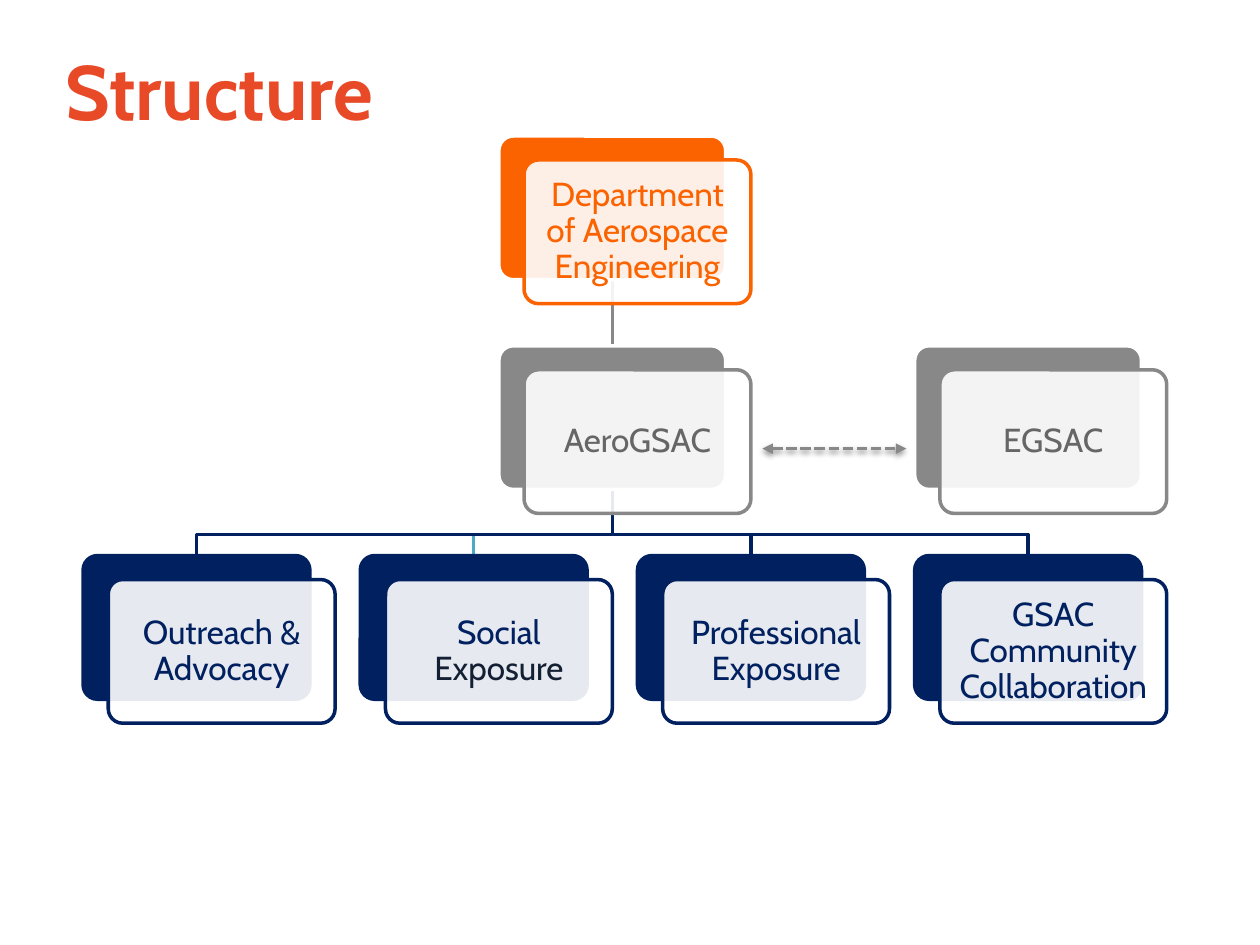
from dataclasses import dataclass

from lxml import etree
from pptx import Presentation
from pptx.dml.color import RGBColor
from pptx.enum.dml import MSO_LINE
from pptx.enum.shapes import MSO_CONNECTOR, MSO_SHAPE
from pptx.enum.text import MSO_ANCHOR, PP_ALIGN
from pptx.oxml.ns import qn
from pptx.util import Inches, Pt

ROUNDED = MSO_SHAPE.ROUNDED_RECTANGLE
STRAIGHT = MSO_CONNECTOR.STRAIGHT
DASH = MSO_LINE.SQUARE_DOT
MIDDLE = MSO_ANCHOR.MIDDLE
LEFT, CENTER = PP_ALIGN.LEFT, PP_ALIGN.CENTER
BOTTOM_SIDE, TOP_SIDE = 2, 0


@dataclass(frozen=True)
class Theme:
    font: str = "Cabin"
    title_size: int = 44
    card_size: int = 19
    line_width: int = 2
    title: str = "E84A27"
    orange: str = "FA6300"
    gray: str = "888888"
    gray_text: str = "666666"
    navy: str = "002060"
    dark_text: str = "131F33"
    cyan: str = "4BACC6"
    white: str = "FFFFFF"
    shadow: str = "000000"


THEME = Theme()


def write_text(frame, text, *, size, color, bold=False, align=LEFT, spacing=1.0):
    """Append one formatted run to the first paragraph of the frame."""
    paragraph = frame.paragraphs[0]
    paragraph.alignment = align
    paragraph.line_spacing = spacing
    run = paragraph.add_run()
    run.text = text
    run.font.name = THEME.font
    run.font.size = Pt(size)
    run.font.bold = bold
    run.font.color.rgb = RGBColor.from_string(color)


class OrgChart:
    """Cards on a grid of columns and rows, with the lines between them."""

    origin = (0.66, 1.08)
    pitch = (2.2, 1.665)
    card_size = (1.8, 1.14)
    front_offset = (0.2, 0.19)

    def __init__(self, slide, theme):
        self.slide = slide
        self.theme = theme

    def point(self, column, row):
        """Slide position of a grid place, whole or fractional."""
        return (Inches(self.origin[0] + column * self.pitch[0]),
                Inches(self.origin[1] + row * self.pitch[1]))

    def style_line(self, line, color):
        line.color.rgb = RGBColor.from_string(color)
        line.width = Pt(self.theme.line_width)

    def send_to_back(self, shape):
        self.slide.shapes._spTree.insert(2, shape._element)

    def title(self, text):
        box = self.slide.shapes.add_textbox(
            Inches(0.42), Inches(0.3), Inches(9.08), Inches(1.25))
        box.text_frame.word_wrap = True
        write_text(box.text_frame, text, size=self.theme.title_size,
                   color=self.theme.title, bold=True)

    def panel(self, x, y, fill, outline, opacity=100):
        width, height = (Inches(side) for side in self.card_size)
        panel = self.slide.shapes.add_shape(ROUNDED, x, y, width, height)
        panel.adjustments[0] = 0.1
        panel.shadow.inherit = False
        panel.fill.solid()
        panel.fill.fore_color.rgb = RGBColor.from_string(fill)
        if opacity < 100:
            color = panel.fill._xPr.find(f"{qn('a:solidFill')}/{qn('a:srgbClr')}")
            etree.SubElement(color, qn("a:alpha"), val=str(opacity * 1000))
        self.style_line(panel.line, outline)
        return panel

    def card(self, column, row, runs, color, back_outline):
        """A solid panel under a translucent labelled one; returns the solid one."""
        x, y = self.point(column, row)
        back = self.panel(x, y, color, back_outline)
        dx, dy = (Inches(offset) for offset in self.front_offset)
        front = self.panel(x + dx, y + dy, self.theme.white, color, opacity=90)
        frame = front.text_frame
        frame.word_wrap = True
        frame.vertical_anchor = MIDDLE
        frame.margin_left = frame.margin_right = Inches(0.11)
        frame.margin_top = frame.margin_bottom = Inches(0.11)
        for text, text_color in runs:
            write_text(frame, text, size=self.theme.card_size, color=text_color,
                       align=CENTER, spacing=0.9)
        return back

    def connector(self, start, end, color):
        line = self.slide.shapes.add_connector(STRAIGHT, *start, *end)
        self.style_line(line.line, color)
        effects = etree.SubElement(line._element.spPr, qn("a:effectLst"))
        return line, effects

    def link(self, parent, child, color):
        line, _ = self.connector((0, 0), (0, 0), color)
        line.begin_connect(parent, BOTTOM_SIDE)
        line.end_connect(child, TOP_SIDE)
        self.send_to_back(line)

    def branch(self, parent, child, bus_row, color):
        """An elbow line from the parent down to the bus and on to the child."""
        start_x = parent.left + parent.width // 2
        end_x = child.left + child.width // 2
        bus_y = self.point(0, bus_row)[1]
        builder = self.slide.shapes.build_freeform(start_x, parent.top + parent.height)
        builder.add_line_segments(
            [(start_x, bus_y), (end_x, bus_y), (end_x, child.top)], close=False)
        elbow = builder.convert_to_shape()
        elbow.fill.background()
        elbow.shadow.inherit = False
        self.style_line(elbow.line, color)
        self.send_to_back(elbow)

    def exchange(self, start, end, color):
        """A dashed, shadowed line with an arrowhead at both ends."""
        arrow, effects = self.connector(self.point(*start), self.point(*end), color)
        arrow.line.dash_style = DASH
        line = arrow.line._get_or_add_ln()
        for tag in ("a:headEnd", "a:tailEnd"):
            etree.SubElement(line, qn(tag), type="triangle")
        shadow = etree.SubElement(effects, qn("a:outerShdw"), blurRad=str(Pt(3.1)),
                                  dist=str(Pt(1.6)), dir="5400000", rotWithShape="0")
        tint = etree.SubElement(shadow, qn("a:srgbClr"), val=self.theme.shadow)
        etree.SubElement(tint, qn("a:alpha"), val="38000")


def main():
    deck = Presentation()
    deck.slide_width, deck.slide_height = Inches(10), Inches(7.5)
    chart = OrgChart(deck.slides.add_slide(deck.slide_layouts[6]), THEME)
    navy, gray, white = THEME.navy, THEME.gray, THEME.white

    chart.title("Structure")
    department = chart.card(
        1.5, 0, [("Department of Aerospace Engineering", THEME.orange)],
        THEME.orange, white)
    council = chart.card(1.5, 1, [("AeroGSAC", THEME.gray_text)], gray, white)
    chart.card(3, 1, [("EGSAC", THEME.gray_text)], gray, white)

    committees = [
        ([("Outreach & Advocacy", navy)], navy),
        ([("Social", navy), (" Exposure", THEME.dark_text)], THEME.cyan),
        ([("Professional Exposure", navy)], navy),
        ([("GSAC Community Collaboration", navy)], navy),
    ]
    for column, (runs, branch_color) in enumerate(committees):
        committee = chart.card(column, 2, runs, navy, navy)
        chart.branch(council, committee, 1.9, branch_color)

    chart.link(department, council, gray)
    chart.exchange((2.45, 1.49), (2.97, 1.49), gray)
    deck.save("out.pptx")


if __name__ == "__main__":
    main()
